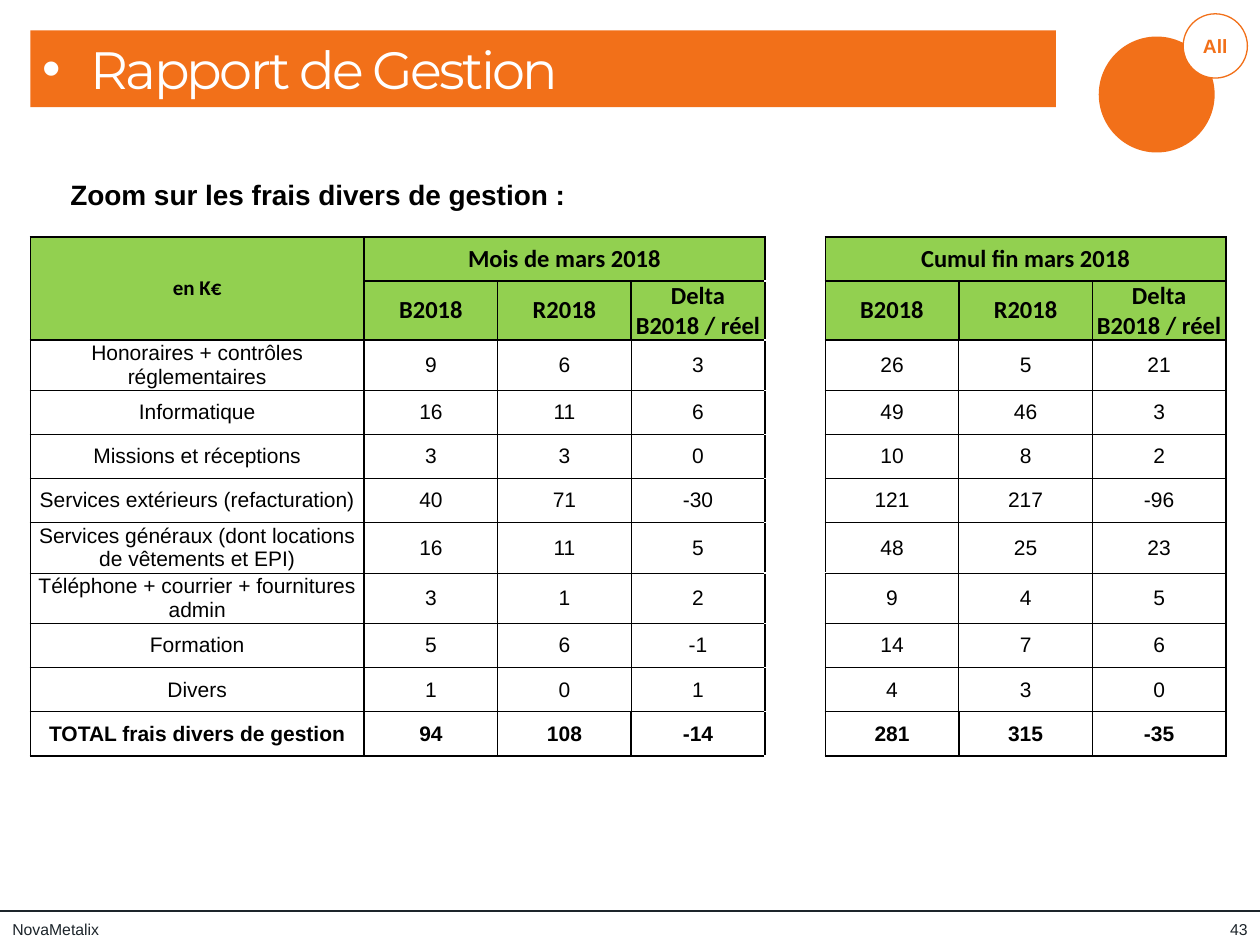
from dataclasses import dataclass
from pptx import Presentation
from pptx.dml.color import RGBColor as RGB
from pptx.enum.shapes import MSO_CONNECTOR as CONN, MSO_SHAPE as SHAPE
from pptx.enum.text import MSO_ANCHOR as ANCHOR, MSO_AUTO_SIZE as FIT, PP_ALIGN as AL
from pptx.oxml import parse_xml
from pptx.oxml.ns import nsdecls
from pptx.oxml.xmlchemy import OxmlElement as Element
from pptx.util import Inches, Pt


@dataclass
class Theme:
    orange: RGB = RGB(0xF2, 0x70, 0x19)
    green: RGB = RGB(0x92, 0xD0, 0x50)
    white: RGB = RGB(0xFF, 0xFF, 0xFF)
    black: RGB = RGB(0x00, 0x00, 0x00)
    ink: RGB = RGB(0x1D, 0x25, 0x2B)
    body: str = "Arial"
    head: str = "Calibri"
    display: str = "Montserrat"
    title: int = 30
    subtitle: int = 16
    header: int = 14
    cell: int = 12
    badge: int = 11
    footer: int = 9
    thick: float = 1
    thin: float = 0.5


T = Theme()
prs = Presentation()
prs.slide_width, prs.slide_height = Inches(10), Inches(7.5)
COL, ROW = prs.slide_width / 100, prs.slide_height / 75
s = prs.slides.add_slide(prs.slide_layouts[5])


def box(x, y, w, h):
    return int(x * COL), int(y * ROW), int(w * COL), int(h * ROW)


def write(tf, text, size, color, font=T.body, bold=False, align=AL.LEFT):
    p = tf.paragraphs[0]
    p.alignment = align
    r = p.add_run()
    r.text = text
    r.font.size, r.font.name, r.font.bold = Pt(size), font, bold
    r.font.color.rgb = color
    return p, r


rule = s.shapes.add_connector(CONN.STRAIGHT, 0, int(72.3 * ROW), prs.slide_width, int(72.3 * ROW))
rule.line.color.rgb, rule.line.width = T.ink, Pt(1.5)
rule._element.spPr.append(Element("a:effectLst"))

disc = s.shapes.add_shape(SHAPE.OVAL, *box(8.72 * 10, 2.9, 9.2, 9.2))
disc.fill.solid()
disc.fill.fore_color.rgb = T.orange
disc.line.fill.background()
disc.shadow.inherit = False

badge = s.shapes.add_shape(SHAPE.OVAL, *box(93.9, 1.1, 5.1, 5.1))
badge.fill.solid()
badge.fill.fore_color.rgb = T.white
badge.line.color.rgb, badge.line.width = T.orange, Pt(0.75)
badge.shadow.inherit = False
tf = badge.text_frame
tf.margin_left = tf.margin_right = 0
tf.vertical_anchor = ANCHOR.MIDDLE
write(tf, "All", T.badge, T.orange, bold=True, align=AL.CENTER)

for x, w, text, align in ((0, 34.4, "NovaMetalix", AL.LEFT), (95.1, 4.9, "43", AL.RIGHT)):
    tf = s.shapes.add_textbox(*box(x, 72.5, w, 2.5)).text_frame
    tf.word_wrap = True
    tf.vertical_anchor = ANCHOR.MIDDLE
    write(tf, text, T.footer, T.ink, align=align)

title = s.shapes.title
title.left, title.top, title.width, title.height = box(2.4, 2.4, 81.4, 6.1)
title.fill.solid()
title.fill.fore_color.rgb = T.orange
tf = title.text_frame
tf.auto_size = FIT.NONE
tf.vertical_anchor = ANCHOR.MIDDLE
p, r = write(tf, "Rapport de Gestion", T.title, T.white, T.display)
r._r.get_or_add_rPr().set("spc", "-150")
pPr = p._p.get_or_add_pPr()
pPr.set("marL", str(int(3.8 * COL)))
pPr.set("indent", str(int(-3.8 * COL)))
pPr.append(parse_xml(f'<a:buFont {nsdecls("a")} typeface="{T.body}"/>'))
pPr.append(parse_xml(f'<a:buChar {nsdecls("a")} char="•"/>'))

tf = s.shapes.add_textbox(*box(4.6, 13.6, 41.8, 3.7)).text_frame
tf.word_wrap = False
tf.auto_size = FIT.SHAPE_TO_FIT_TEXT
write(tf, "Zoom sur les frais divers de gestion :", T.subtitle, T.black, bold=True)

measures = ["B2018", "R2018", "Delta B2018 / réel"]
rows = [
    ["en K€", "Mois de mars 2018", "", "", "", "Cumul fin mars 2018", "", ""],
    ["", *measures, "", *measures],
    ["Honoraires + contrôles réglementaires", 9, 6, 3, "", 26, 5, 21],
    ["Informatique", 16, 11, 6, "", 49, 46, 3],
    ["Missions et réceptions", 3, 3, 0, "", 10, 8, 2],
    ["Services extérieurs (refacturation)", 40, 71, -30, "", 121, 217, -96],
    ["Services généraux (dont locations de vêtements et EPI)", 16, 11, 5, "", 48, 25, 23],
    ["Téléphone + courrier + fournitures admin", 3, 1, 2, "", 9, 4, 5],
    ["Formation", 5, 6, -1, "", 14, 7, 6],
    ["Divers", 1, 0, 1, "", 4, 3, 0],
    ["TOTAL frais divers de gestion", 94, 108, -14, "", 281, 315, -35],
]
GAP, HEADERS, TOTAL = 4, 2, len(rows) - 1
widths = [26.5] + [10.6] * 3 + [4.8] + [10.6] * 3
table = s.shapes.add_table(len(rows), len(widths), *box(2.4, 18.8, sum(widths), 3.5 * len(rows))).table
table.first_row = table.horz_banding = False
for column, w in zip(table.columns, widths):
    column.width = int(w * COL)

for i, row in enumerate(rows):
    table.rows[i].height = int(3.5 * ROW)
    header = i < HEADERS
    for j, value in enumerate(row):
        cell = table.cell(i, j)
        cell.margin_left = cell.margin_right = cell.margin_top = cell.margin_bottom = 0
        cell.vertical_anchor = ANCHOR.MIDDLE
        if value != "":
            size = T.header if header and j else T.cell
            write(cell.text_frame, str(value), size, T.black, T.head if header else T.body,
                  header or i == TOTAL, AL.CENTER)
        framed = header or i == TOTAL
        heavy = {"L": framed or j in (0, 1, GAP, GAP + 1), "R": framed or j in (0, GAP - 1, GAP, 7)}
        if j != GAP:
            heavy |= {"T": framed or i == HEADERS, "B": framed or i == TOTAL - 1}
        tcPr = cell._tc.get_or_add_tcPr()
        for side, strong in heavy.items():
            tcPr.append(parse_xml(
                f'<a:ln{side} {nsdecls("a")} w="{Pt(T.thick if strong else T.thin)}">'
                f'<a:solidFill><a:srgbClr val="{T.black}"/></a:solidFill></a:ln{side}>'))
        cell.fill.solid()
        cell.fill.fore_color.rgb = T.green if header and j != GAP else T.white

table.cell(0, 0).merge(table.cell(1, 0))
for j in (1, GAP + 1):
    table.cell(0, j).merge(table.cell(0, j + 2))

prs.save("out.pptx")
